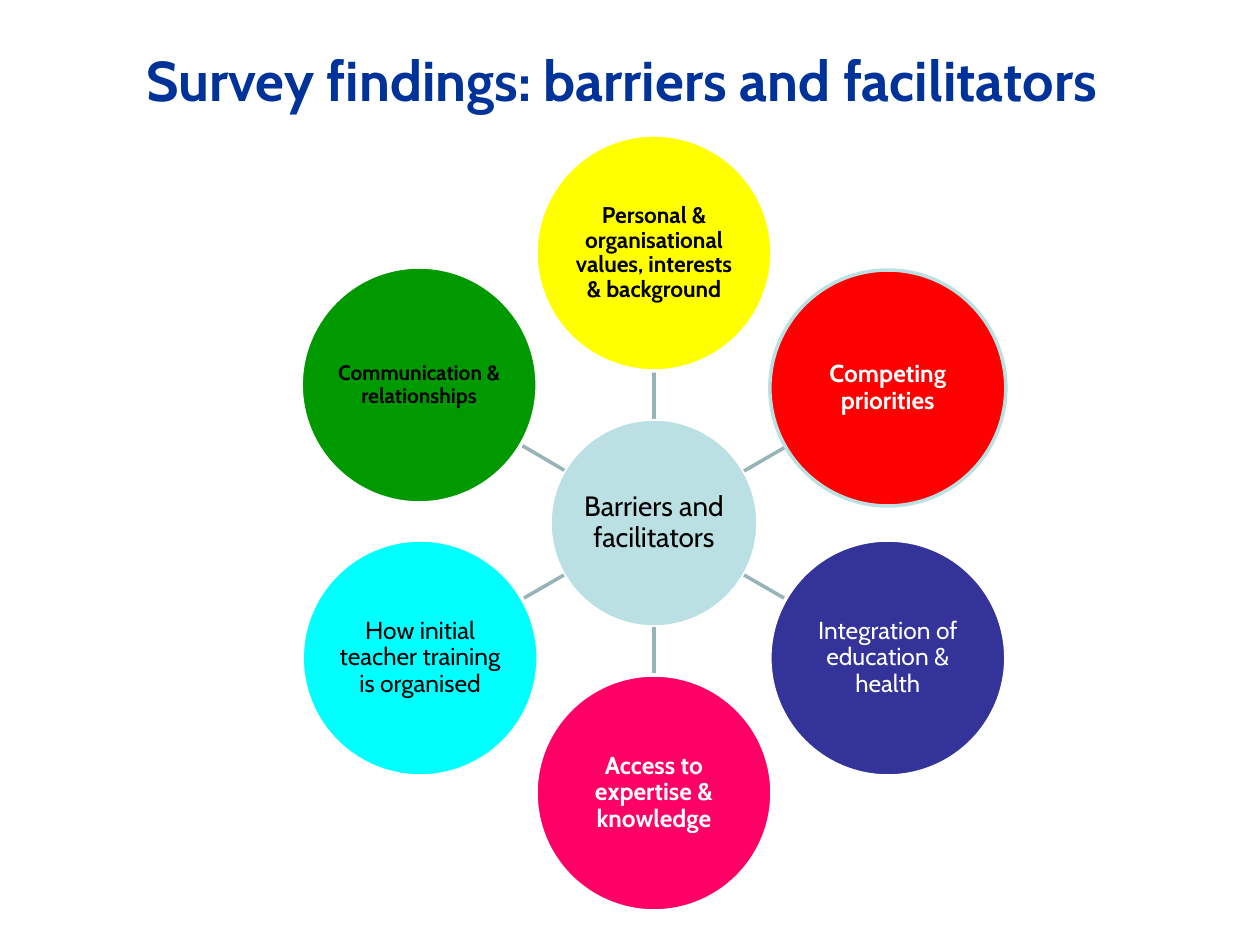
from math import cos, hypot, radians, sin

from lxml.etree import SubElement
from pptx import Presentation
from pptx.dml.color import RGBColor
from pptx.enum.shapes import MSO_CONNECTOR, MSO_SHAPE
from pptx.enum.text import MSO_ANCHOR, MSO_AUTO_SIZE, PP_ALIGN
from pptx.oxml.ns import qn
from pptx.util import Emu, Pt

SCALE = 914400 / 126
WHITE = RGBColor(0xFF, 0xFF, 0xFF)
BLACK = RGBColor(0x00, 0x00, 0x00)
NAVY = RGBColor(0x00, 0x33, 0x99)
PALE_BLUE = RGBColor(0xBB, 0xE0, 0xE3)
SPOKE_GREY = RGBColor(0x96, 0xB3, 0xB6)
YELLOW = RGBColor(0xFF, 0xFF, 0x00)
RED = RGBColor(0xFF, 0x00, 0x00)
INDIGO = RGBColor(0x33, 0x33, 0x99)
PINK = RGBColor(0xFF, 0x00, 0x66)
CYAN = RGBColor(0x00, 0xFF, 0xFF)
GREEN = RGBColor(0x00, 0x99, 0x00)

HUB_CENTRE = (654, 523)
HUB_RADIUS = 104
FACTOR_RADIUS = 118
ORBIT_RADIUS = 270
FACTORS = [
    ("Personal & organisational values, interests & background", YELLOW, WHITE, BLACK, 13, True, (0, 0)),
    ("Competing priorities", RED, PALE_BLUE, WHITE, 14, True, (0, 0)),
    ("Integration of education & health", INDIGO, WHITE, WHITE, 14, False, (0, 0)),
    ("Access to expertise & knowledge", PINK, WHITE, WHITE, 14, True, (0, 0)),
    ("How initial teacher training is organised", CYAN, WHITE, BLACK, 14, False, (0, 0)),
    ("Communication & relationships", GREEN, WHITE, BLACK, 12, True, (-1, -3)),
]


def px(length):
    """Turn pixels into EMU."""
    return Emu(round(length * SCALE))


def apply(target, values):
    """Set each attribute named in a dict."""
    for name, value in values.items():
        setattr(target, name, value)


class SlideBuilder:
    """Hold the style and the slide being built."""

    def __init__(self, slide, font_name="Cabin", line_width=2):
        """Keep the slide with its shared font and line width."""
        self.slide = slide
        self.font_name = font_name
        self.line_width = Pt(line_width)

    def label(self, frame, text, colour, size, bold, inset):
        """Fill a text frame with one centred, middle-anchored paragraph."""
        margins = {f"margin_{side}": px(inset) for side in ("left", "right", "top", "bottom")}
        apply(frame, {"text": text, "word_wrap": True, "auto_size": MSO_AUTO_SIZE.NONE,
                      "vertical_anchor": MSO_ANCHOR.MIDDLE, **margins})
        paragraph = frame.paragraphs[0]
        paragraph.alignment = PP_ALIGN.CENTER
        apply(paragraph.font, {"name": self.font_name, "size": Pt(size), "bold": bold})
        paragraph.font.color.rgb = colour
        return paragraph

    def title(self, text, left, top, width, height):
        """Place and format the title placeholder."""
        shape = self.slide.shapes.title
        apply(shape, {"left": px(left), "top": px(top), "width": px(width), "height": px(height)})
        self.label(shape.text_frame, text, NAVY, 32, True, 12)

    def circle(self, centre, radius, text, fill, outline, colour, size, bold):
        """Draw a labelled circle around a centre."""
        x, y = centre
        shape = self.slide.shapes.add_shape(
            MSO_SHAPE.OVAL, px(x - radius), px(y - radius), px(2 * radius), px(2 * radius))
        shape.shadow.inherit = False
        shape.fill.solid()
        shape.fill.fore_color.rgb = fill
        shape.line.color.rgb = outline
        shape.line.width = self.line_width
        paragraph = self.label(shape.text_frame, text, colour, size, bold, 1)
        paragraph.line_spacing = 0.9

    def spoke(self, start, end, start_radius, end_radius):
        """Join the edges of two circles along their centre line."""
        distance = hypot(end[0] - start[0], end[1] - start[1])
        points = [px(a + (b - a) * reach / distance)
                  for reach in (start_radius, distance - end_radius)
                  for a, b in zip(start, end)]
        connector = self.slide.shapes.add_connector(MSO_CONNECTOR.STRAIGHT, *points)
        connector.line.color.rgb = SPOKE_GREY
        connector.line.width = self.line_width
        SubElement(connector.element.spPr, qn("a:effectLst"))


def main():
    """Build and save the slide."""
    presentation = Presentation()
    apply(presentation, {"slide_width": px(1260), "slide_height": px(945)})
    builder = SlideBuilder(presentation.slides.add_slide(presentation.slide_layouts[5]))
    builder.title("Survey findings: barriers and facilitators", 55, 0, 1134, 158)
    builder.circle(HUB_CENTRE, HUB_RADIUS, "Barriers and facilitators",
                   PALE_BLUE, WHITE, BLACK, 16, False)
    for index, (*details, nudge) in enumerate(FACTORS):
        angle = radians(index * 360 / len(FACTORS) - 90)
        centre = tuple(middle + ORBIT_RADIUS * turn(angle) + shift
                       for middle, turn, shift in zip(HUB_CENTRE, (cos, sin), nudge))
        builder.spoke(HUB_CENTRE, centre, HUB_RADIUS, FACTOR_RADIUS)
        builder.circle(centre, FACTOR_RADIUS, *details)
    presentation.save("out.pptx")


if __name__ == "__main__":
    main()
